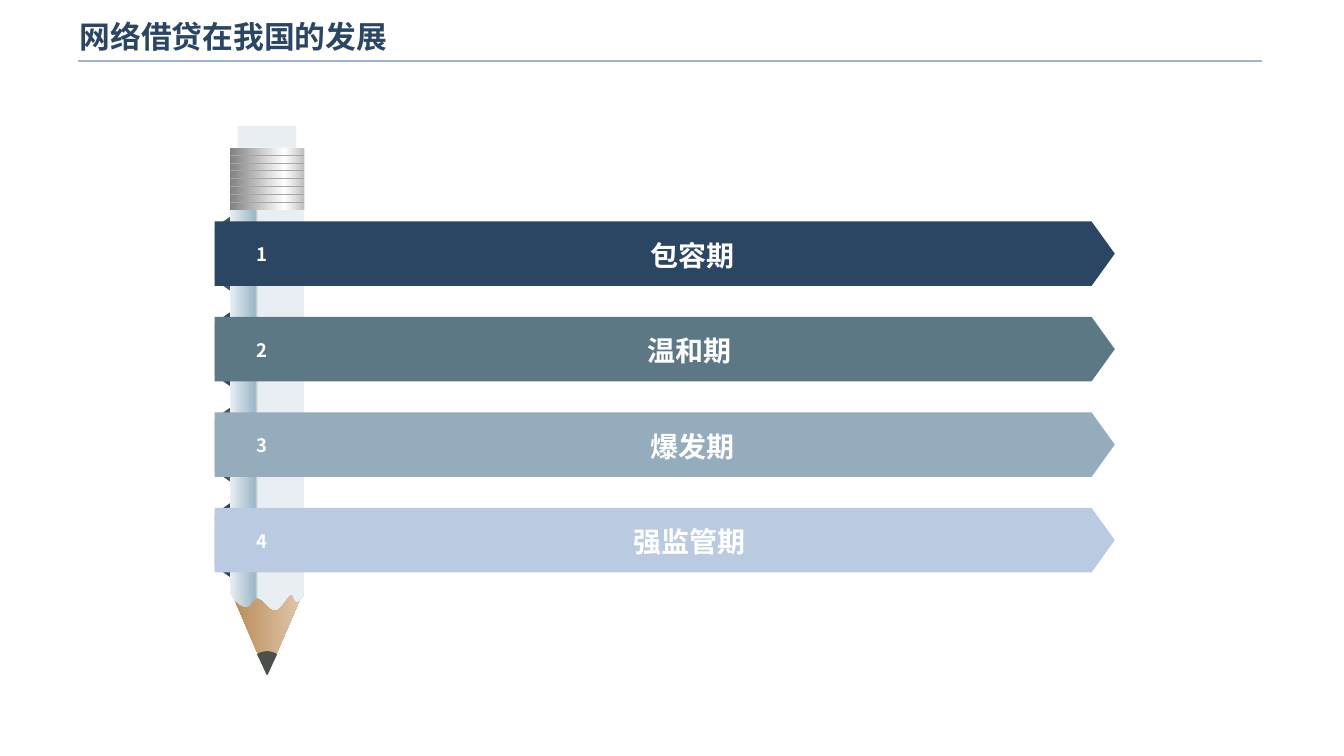
"""Build a slide of four lending stages hung on a pencil."""
from lxml import etree
from pptx import Presentation
from pptx.dml.color import RGBColor
from pptx.enum.shapes import MSO_CONNECTOR, MSO_SHAPE
from pptx.enum.text import MSO_ANCHOR, MSO_AUTO_SIZE, PP_ALIGN
from pptx.oxml.ns import qn
from pptx.util import Pt

STRAIGHT = MSO_CONNECTOR.STRAIGHT
RECTANGLE = MSO_SHAPE.RECTANGLE
PENTAGON = MSO_SHAPE.PENTAGON
TRAPEZOID = MSO_SHAPE.TRAPEZOID
MIDDLE = MSO_ANCHOR.MIDDLE
GROW = MSO_AUTO_SIZE.SHAPE_TO_FIT_TEXT
NO_RESIZE = MSO_AUTO_SIZE.NONE
CENTER = PP_ALIGN.CENTER
LEFT = PP_ALIGN.LEFT

NAVY = RGBColor(0x2B, 0x46, 0x63)
SLATE = RGBColor(0x41, 0x58, 0x67)
DUSK = RGBColor(0x42, 0x56, 0x68)
TEAL = RGBColor(0x5C, 0x78, 0x85)
STEEL = RGBColor(0x94, 0xAC, 0xBC)
SKY = RGBColor(0xB9, 0xCA, 0xE1)
RULE_BLUE = RGBColor(0x98, 0xB4, 0xD2)
PALE = RGBColor(0xE8, 0xEE, 0xF2)
SHADE = RGBColor(0x9C, 0xB6, 0xC7)
WOOD_DARK = RGBColor(0xB8, 0x89, 0x54)
WOOD_LIGHT = RGBColor(0xE1, 0xC9, 0xAF)
LEAD = RGBColor(0x4C, 0x50, 0x4C)
GROOVE = RGBColor(0xA6, 0xA6, 0xA6)
METAL_DARK = RGBColor(0x80, 0x80, 0x80)
METAL_LIGHT = RGBColor(0xBF, 0xBF, 0xBF)
WHITE = RGBColor(0xFF, 0xFF, 0xFF)
CJK_FONT = "Noto Sans CJK SC"


def paint(shape, stops):
    """Fill with one colour, or with a left-to-right gradient of several stops."""
    shape.shadow.inherit = False
    shape.line.fill.background()
    if len(stops) == 1:
        shape.fill.solid()
        shape.fill.fore_color.rgb = stops[0][1]
        return
    shape.fill.gradient()
    shape.fill.gradient_angle = 0
    stop_list = shape._element.spPr.find(qn("a:gradFill")).find(qn("a:gsLst"))
    for old_stop in list(stop_list):
        stop_list.remove(old_stop)
    for percent, color in stops:
        stop = etree.SubElement(stop_list, qn("a:gs"), pos=str(percent * 1000))
        etree.SubElement(stop, qn("a:srgbClr"), val=str(color))


def write(frame, text, size, font, color, align, spacing):
    """Write one bold run into the first paragraph of a frame."""
    frame.word_wrap = True
    para = frame.paragraphs[0]
    para.alignment = align
    para.line_spacing = spacing
    span = para.add_run()
    span.text = text
    span.font.size = Pt(size)
    span.font.bold = True
    span.font.name = font
    span.font.color.rgb = color
    etree.SubElement(span._r.get_or_add_rPr(), qn("a:ea"), typeface=CJK_FONT)


deck = Presentation()
deck.slide_width = Pt(960)
deck.slide_height = Pt(540)
page = deck.slides.add_slide(deck.slide_layouts[5])
shapes = page.shapes

title = shapes.title
title.left, title.top, title.width, title.height = Pt(49.7), Pt(6.5), Pt(771), Pt(38)
title.text_frame.auto_size = NO_RESIZE
title.text_frame.vertical_anchor = MIDDLE
write(title.text_frame, "网络借贷在我国的发展", 22, "Arial", NAVY, LEFT, 1.0)

PENCIL_LEFT, PENCIL_RIGHT, PENCIL_MIDDLE = 164.2, 217.4, 190.8
PENCIL_TIP = 482.4
FERRULE_TOP, BODY_TOP = 105.5, 149.8

wave = [(PENCIL_RIGHT, 421.2),
        (216.7, 427), (214.6, 429.1), (211.7, 429.8),
        (208.8, 427.7), (210.2, 424.1), (207.4, 424.8),
        (205.2, 425.5), (200.2, 435.6), (196.6, 435.6),
        (193, 436.3), (187.9, 427.7), (184.3, 427),
        (180.7, 427), (178.6, 434.2), (175, 433.4),
        (169.9, 432), (165.6, 427), (PENCIL_LEFT, 423.4)]
lead_edge = [(183.6, 467.3), (187.9, 464.4), (193.7, 464.4), (198, 467.3)]
wood = [(PENCIL_LEFT, 420.8), (PENCIL_RIGHT, 420.8), (PENCIL_MIDDLE, PENCIL_TIP)]
STEPS = 10

pencil_outlines = [
    (wood, [], [(0, WOOD_DARK), (100, WOOD_LIGHT)]),
    ([(PENCIL_LEFT, BODY_TOP), (PENCIL_RIGHT, BODY_TOP)], wave,
     [(0, PALE), (34, SHADE), (38, PALE), (100, PALE)]),
    ([(PENCIL_MIDDLE, PENCIL_TIP)], lead_edge, [(0, LEAD)]),
]
for corners, curve, stops in pencil_outlines:
    points = corners + curve[:1]
    for first in range(0, len(curve) - 1, 3):
        nodes = curve[first:first + 4]
        for step in range(1, STEPS + 1):
            t = step / STEPS
            weights = ((1 - t) ** 3, 3 * t * (1 - t) ** 2, 3 * t * t * (1 - t), t ** 3)
            points.append(tuple(sum(weight * node[axis] for weight, node in zip(weights, nodes))
                                for axis in (0, 1)))
    points = [(Pt(x), Pt(y)) for x, y in points]
    builder = shapes.build_freeform(*points[0])
    builder.add_line_segments(points[1:], close=True)
    paint(builder.convert_to_shape(), stops)

ferrule = shapes.add_shape(RECTANGLE, Pt(PENCIL_LEFT), Pt(FERRULE_TOP),
                           Pt(PENCIL_RIGHT - PENCIL_LEFT), Pt(BODY_TOP - FERRULE_TOP))
paint(ferrule, [(0, METAL_DARK), (73, WHITE), (100, METAL_LIGHT)])
eraser = shapes.add_shape(RECTANGLE, Pt(169.8), Pt(90), Pt(41.8), Pt(15.5))
paint(eraser, [(0, PALE)])

rules = [(55.8, 901.2, 43.5, RULE_BLUE, 1)]
rules += [(PENCIL_LEFT, PENCIL_RIGHT, 110.7 + 5.66 * groove, GROOVE, 0.5) for groove in range(7)]
for start, end, y, color, weight in rules:
    rule = shapes.add_connector(STRAIGHT, Pt(start), Pt(y), Pt(end), Pt(y))
    rule.line.color.rgb = color
    rule.line.width = Pt(weight)
    etree.SubElement(rule._element.spPr, qn("a:effectLst"))

BAR_LEFT, BAR_TOP, BAR_WIDTH, BAR_HEIGHT, BAR_PITCH = 153.3, 158.2, 643, 46, 68.2
FOLD_WIDTH, FOLD_HEIGHT = 52.6, 10.8
stages = [("包容期", NAVY, SLATE), ("温和期 ", TEAL, NAVY),
          ("爆发期", STEEL, DUSK), ("强监管期 ", SKY, NAVY)]
for index, (label, bar_color, fold_color) in enumerate(stages):
    top = BAR_TOP + index * BAR_PITCH
    fold = shapes.add_shape(TRAPEZOID, Pt(132.5), Pt(top + (BAR_HEIGHT - FOLD_HEIGHT) / 2),
                            Pt(FOLD_WIDTH), Pt(FOLD_HEIGHT))
    fold.rotation = 270
    fold.adjustments[0] = 0.7
    paint(fold, [(0, fold_color)])
    bar = shapes.add_shape(PENTAGON, Pt(BAR_LEFT), Pt(top), Pt(BAR_WIDTH), Pt(BAR_HEIGHT))
    bar.adjustments[0] = 0.36
    paint(bar, [(0, bar_color)])
    for text, size, left, offset, width, height in (
            (label, 20, 281.5, 3.8, 427, 36),
            (str(index + 1), 13.2, 157, 9, 59.8, 26.6)):
        box = shapes.add_textbox(Pt(left), Pt(top + offset), Pt(width), Pt(height))
        box.text_frame.auto_size = GROW
        write(box.text_frame, text, size, CJK_FONT, WHITE, CENTER, 1.2)

deck.save("out.pptx")
